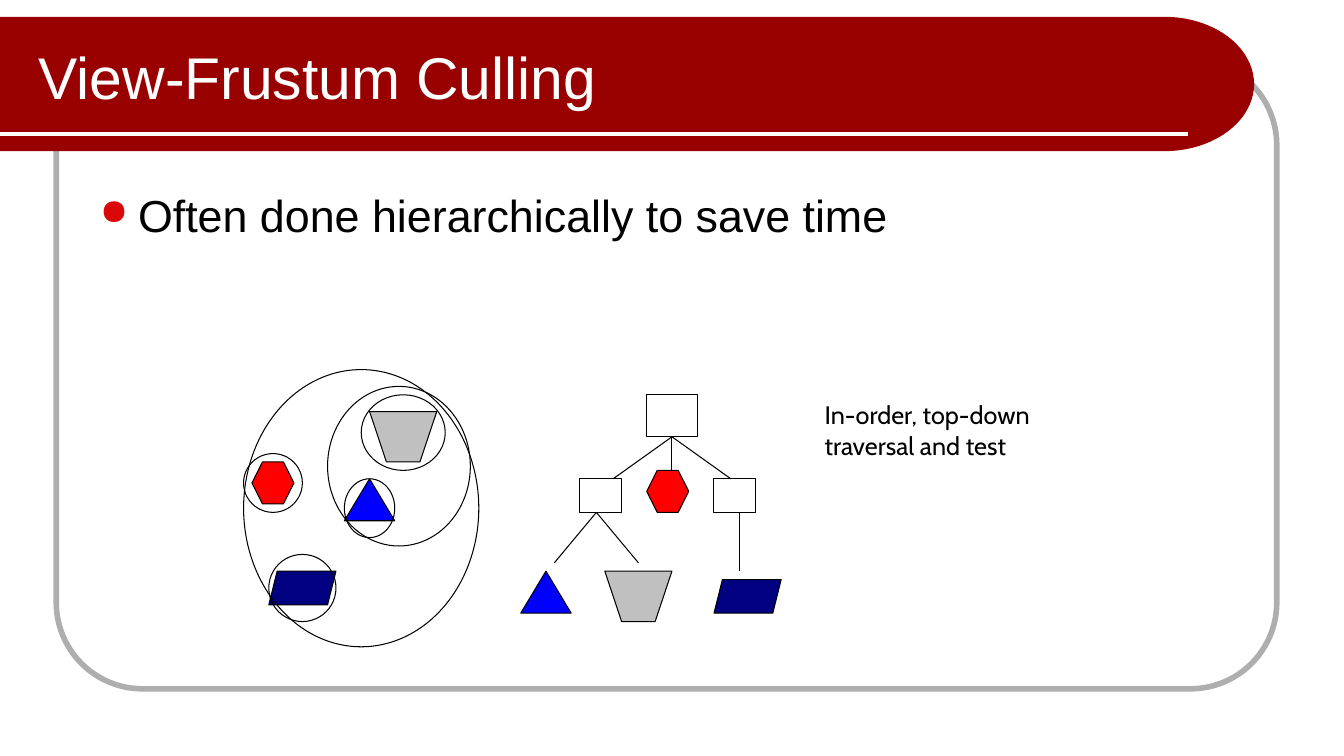
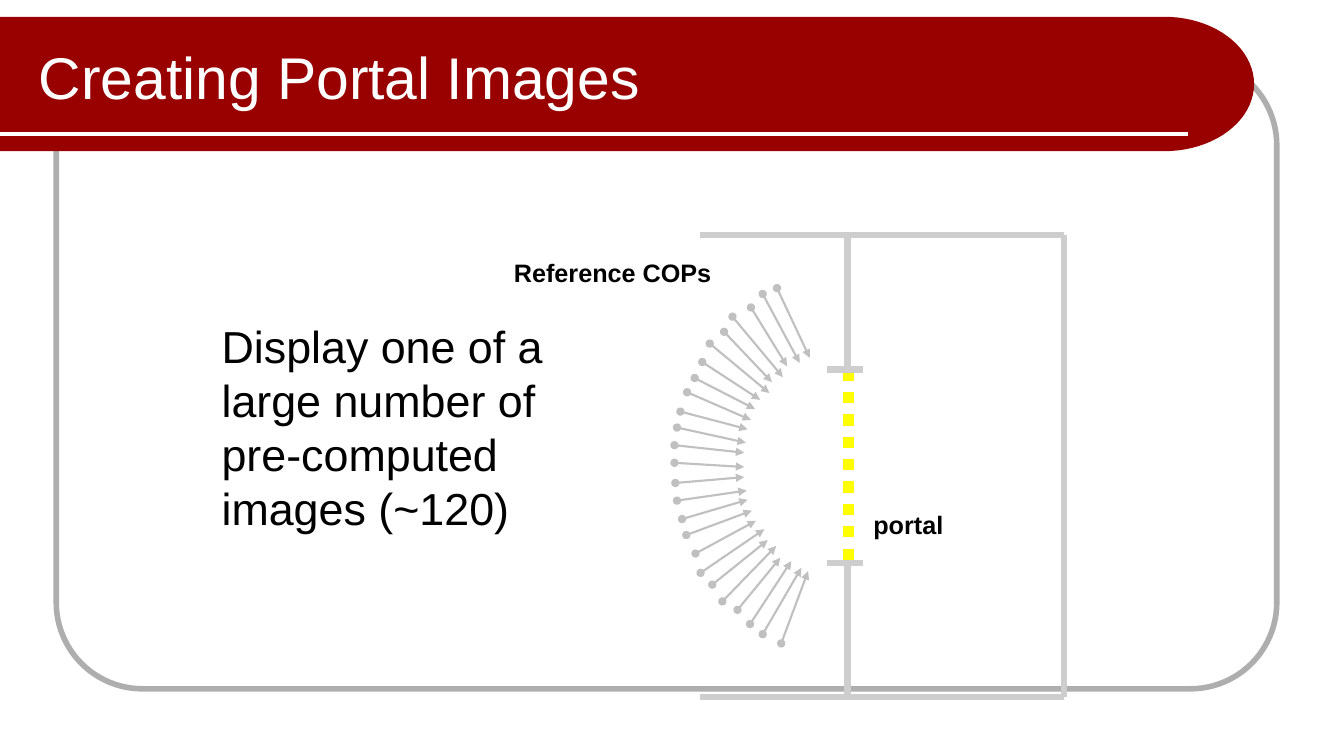
import math
import pptx
import pptx.util
import pptx.dml.color
import pptx.enum.dml
import pptx.enum.shapes
import pptx.enum.text
import pptx.oxml
import pptx.oxml.ns

Color = pptx.dml.color.RGBColor
Kind = pptx.enum.shapes.MSO_SHAPE
Fit = pptx.enum.text.MSO_AUTO_SIZE

# The slide is a grid of 160 columns by 90 rows, twelve to the inch.
COLS, ROWS = 160, 90

WHITE = Color(0xFF, 0xFF, 0xFF)
BLACK = Color(0x00, 0x00, 0x00)
MAROON = Color(0x99, 0x00, 0x00)
FRAME = Color(0xAE, 0xAE, 0xAE)
WALL = Color(0xCE, 0xCE, 0xCE)
SILVER = Color(0xC0, 0xC0, 0xC0)
YELLOW = Color(0xFF, 0xFF, 0x00)
RED = Color(0xFF, 0x00, 0x00)
BLUE = Color(0x00, 0x00, 0xFF)
NAVY = Color(0x00, 0x00, 0x80)

# Start column and row, then end column and row, from top to bottom.
RAYS = [
    (92.5, 34.3, 96.4, 42.6), (90.8, 35, 95.2, 43.2),
    (89.4, 36.6, 93.7, 43.6), (87.2, 37.7, 93.2, 44.9),
    (86.2, 39.5, 91.9, 45.5), (84.5, 40.9, 91.6, 46.8),
    (83.6, 43.1, 90.5, 47.6), (82.7, 45, 89.9, 48.7),
    (81.8, 46.7, 89.4, 50), (81, 49, 89, 51.1),
    (80.6, 50.9, 88.8, 52.7), (80.3, 53, 88.6, 53.9),
    (80.3, 55.1, 88.6, 55.6), (80.4, 57.5, 88.6, 56.8),
    (80.6, 59.6, 88.9, 58.4), (81.2, 61.8, 89, 59.5),
    (81.7, 63.7, 89.5, 60.8), (82.8, 65.9, 90, 62),
    (83.4, 68.2, 91, 63), (84.8, 69.6, 91.4, 64.3),
    (86, 71.6, 92.4, 65), (87.8, 72.6, 92.9, 66.4),
    (89.3, 74.3, 94.2, 66.8), (90.8, 75.5, 95.4, 67.6),
    (93, 76.6, 96.2, 68),
]


def grid(*cells):
    """Turn columns or rows into lengths."""
    return [pptx.util.Inches(cell / 12) for cell in cells]


def add_xml(parent, tag, **attrs):
    node = pptx.oxml.parse_xml(f'<a:{tag} {pptx.oxml.ns.nsdecls("a")}/>')
    for name, value in attrs.items():
        node.set(name, value)
    parent.append(node)
    return node


def paint(shape, fill, color, width):
    """Fill and outline a shape; None means no fill or no line."""
    shape.shadow.inherit = False
    if fill is None:
        shape.fill.background()
    else:
        shape.fill.solid()
        shape.fill.fore_color.rgb = fill
    if color is None:
        shape.line.fill.background()
    else:
        shape.line.color.rgb = color
        shape.line.width = pptx.util.Pt(width)
    return shape


def add_form(slide, kind, box, fill=None, color=BLACK, width=0.75):
    shape = slide.shapes.add_shape(kind, *grid(*box))
    return paint(shape, fill, color, width)


def add_path(slide, points, fill, color=BLACK, width=0.75):
    first, *rest = [grid(*point) for point in points]
    path = slide.shapes.build_freeform(*first)
    path.add_line_segments(rest, close=True)
    return paint(path.convert_to_shape(), fill, color, width)


def add_line(slide, ends, color=BLACK, width=0.75):
    straight = pptx.enum.shapes.MSO_CONNECTOR.STRAIGHT
    line = slide.shapes.add_connector(straight, *grid(*ends))
    line.line.color.rgb = color
    line.line.width = pptx.util.Pt(width)
    add_xml(line.element.spPr, "effectLst")
    return line


def add_ray(slide, ends):
    """Draw an arrow that starts with a dot."""
    pen = add_line(slide, ends, SILVER, 1.5).line
    stroke = pen._get_or_add_ln()
    add_xml(stroke, "headEnd", type="oval")
    add_xml(stroke, "tailEnd", type="triangle")


def set_font(para, size, name="Arial", color=BLACK, bold=False):
    font = para.font
    font.size, font.name, font.bold = pptx.util.Pt(size), name, bold
    font.color.rgb = color


def add_text(slide, box, lines, size, name="Arial", bold=False, wrap=False):
    frame = slide.shapes.add_textbox(*grid(*box)).text_frame
    frame.word_wrap = wrap
    frame.auto_size = Fit.SHAPE_TO_FIT_TEXT
    frame.text = "\n".join(lines)
    for para in frame.paragraphs:
        set_font(para, size, name, bold=bold)


def add_point(slide, box, text, size):
    """Add a text box with one bulleted paragraph."""
    frame = slide.shapes.add_textbox(*grid(*box)).text_frame
    frame.word_wrap = True
    para = frame.paragraphs[0]
    para.text = text
    props = para._p.get_or_add_pPr()
    dent = pptx.util.Inches(0.38)
    props.set("marL", str(dent))
    props.set("indent", str(-dent))
    add_xml(add_xml(props, "buClr"), "srgbClr", val="DA0808")
    add_xml(props, "buSzPct", val="80000")
    add_xml(props, "buChar", char="●")
    set_font(para, size)


def add_slide(deck, layout, title):
    slide = deck.slides.add_slide(layout)
    head = slide.shapes.title
    head.left, head.top, head.width, head.height = grid(3.4, 3, 124.6, 12)
    frame = head.text_frame
    frame.text = title
    frame.word_wrap = True
    frame.auto_size = Fit.NONE
    frame.vertical_anchor = pptx.enum.text.MSO_ANCHOR.MIDDLE
    para = frame.paragraphs[0]
    para.alignment = pptx.enum.text.PP_ALIGN.LEFT
    set_font(para, 42, color=WHITE)
    return slide


def dress(layout, slide):
    """Draw frame and band on a slide, then move them to its layout."""
    frame = add_form(slide, Kind.ROUNDED_RECTANGLE, (6.7, 7, 145.3, 75),
                     None, FRAME, 4)
    frame.adjustments[0] = 0.137
    steps = 40
    turns = [math.pi * (i / steps - 0.5) for i in range(steps + 1)]
    curve = [(138.6 + 10.7 * math.cos(turn), 10 + 8 * math.sin(turn))
             for turn in turns]
    band = add_path(slide, [(0, 2), *curve, (0, 18)], MAROON, None)
    rule = add_line(slide, (0, 16, 141.4, 16), WHITE, 3)
    for spot, shape in enumerate((frame, band, rule)):
        node = shape.element
        node.xpath(".//p:cNvPr")[0].set("id", str(100 + spot))
        layout.shapes.element.insert(2 + spot, node)


def add_cup(slide, col, row):
    """Draw a trapezoid that narrows downwards."""
    points = [(0, 0), (2, 6), (6, 6), (8, 0)]
    add_path(slide, [(col + x, row + y) for x, y in points], SILVER)


def draw_scene(slide):
    add_cup(slide, 44, 49)
    add_form(slide, Kind.ISOSCELES_TRIANGLE, (41, 57, 6, 5), BLUE)
    add_form(slide, Kind.HEXAGON, (30, 55, 5, 5), RED)
    add_form(slide, Kind.PARALLELOGRAM, (32, 68, 8, 4), NAVY)
    for bound in [(29, 54, 7, 7), (43, 47, 10, 9), (41, 57, 6, 7),
                  (32, 66, 8, 8), (39, 46, 17, 19), (29, 44, 28, 33)]:
        add_form(slide, Kind.OVAL, bound)


def draw_tree(slide):
    root = add_form(slide, Kind.RECTANGLE, (77, 47, 6, 5))
    for col, row in [(73, 57), (80, 56), (87, 57)]:
        add_line(slide, (80, 52, col, row)).begin_connect(root, 2)
    for col in (69, 85):
        add_form(slide, Kind.RECTANGLE, (col, 57, 5, 4))
    for ends in [(71, 61, 66, 67), (71, 61, 76, 67), (88, 61, 88, 68)]:
        add_line(slide, ends)
    add_form(slide, Kind.HEXAGON, (77, 56, 5, 5), RED)
    add_form(slide, Kind.ISOSCELES_TRIANGLE, (62, 68, 6, 5), BLUE)
    add_cup(slide, 72, 68)
    add_form(slide, Kind.PARALLELOGRAM, (85, 69, 8, 4), NAVY)


def draw_room(slide):
    left, mid, right = 83.3, 100.9, 126.7
    top, high, low, base = 28, 44, 67, 83
    for ends in [(left, base, right, base), (mid, base, mid, low),
                 (mid, high, mid, top), (left, top, right, top),
                 (right, base, right, top)]:
        add_line(slide, ends, WALL, 4.5)
    portal = add_line(slide, (101, high, 101, low), YELLOW, 8)
    portal.line.dash_style = pptx.enum.dml.MSO_LINE.ROUND_DOT
    for row in (low, high):
        add_line(slide, (98.4, row, 102.8, row), WALL, 4.5)
    for ray in RAYS:
        add_ray(slide, ray)


def main():
    deck = pptx.Presentation()
    deck.slide_width, deck.slide_height = grid(COLS, ROWS)
    layout = deck.slide_layouts[5]

    culling = add_slide(deck, layout, "View-Frustum Culling")
    dress(layout, culling)
    add_point(culling, (10.7, 21.7, 138.7, 58),
              "Often done hierarchically to save time", 32)
    draw_scene(culling)
    draw_tree(culling)
    add_text(culling, (97, 47, 27.6, 8.5),
             ["In-order, top-down", "traversal and test"], 18, "Cabin")

    portals = add_slide(deck, layout, "Creating Portal Images")
    add_text(portals, (60, 30, 26.2, 4.8), ["Reference COPs"], 18, bold=True)
    add_text(portals, (25.2, 37.4, 44.4, 27.1),
             ["Display one of a large number of pre-computed images (~120)"],
             32, wrap=True)
    draw_room(portals)
    add_text(portals, (102.8, 60, 10.8, 4.8), ["portal"], 18, bold=True)
    deck.save("out.pptx")


if __name__ == "__main__":
    main()
